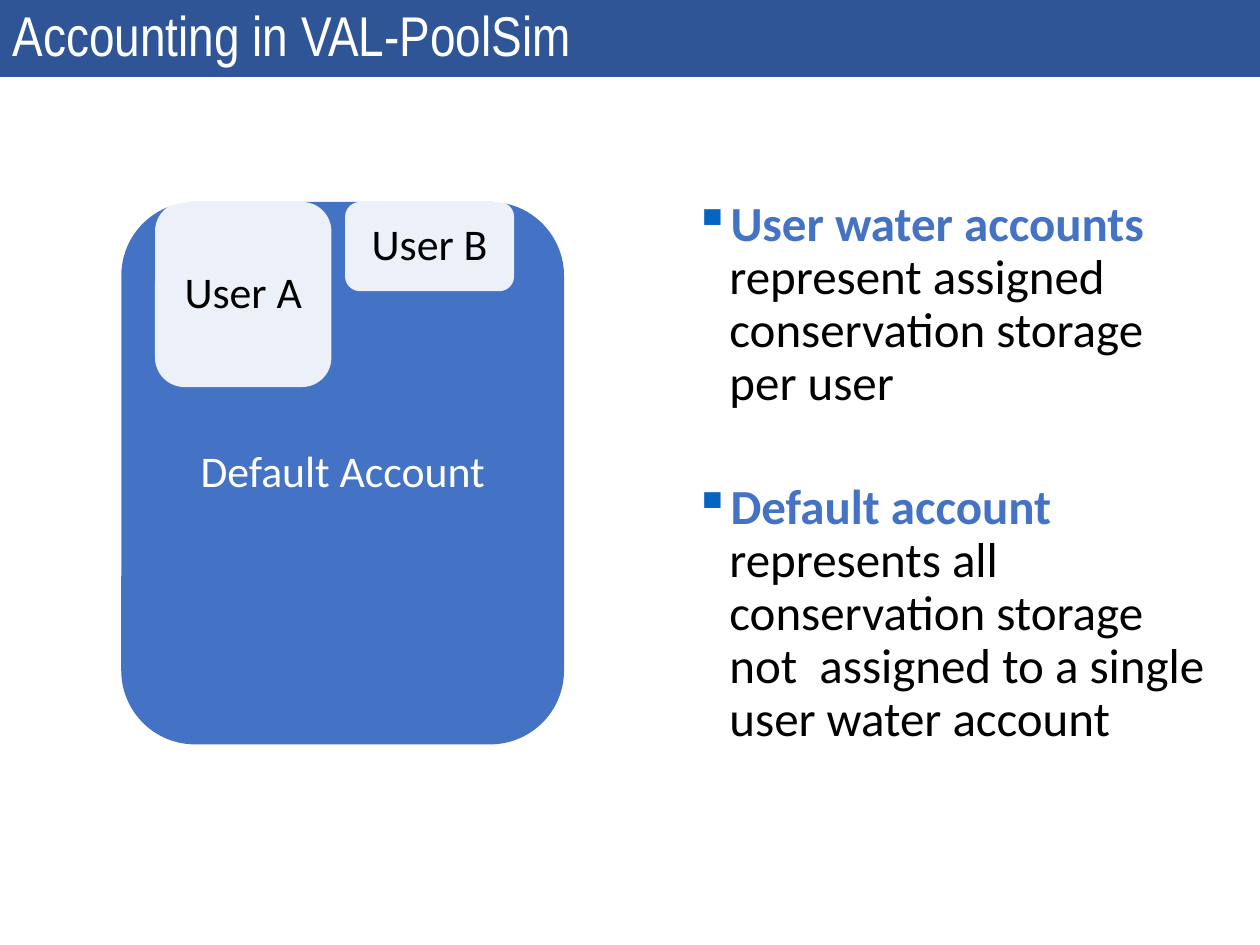
from pptx import Presentation
from pptx.dml.color import RGBColor
from pptx.enum.shapes import MSO_SHAPE
from pptx.enum.text import MSO_ANCHOR, MSO_AUTO_SIZE, PP_ALIGN
from pptx.oxml.ns import qn
from pptx.util import Pt
from lxml.etree import SubElement

TITLE_BLUE, BLUE, BULLET_BLUE = "2F5597", "4472C4", "0563C1"
WHITE, BLACK = "FFFFFF", "000000"


def color(hex_string):
    return RGBColor.from_string(hex_string)


class SlideBuilder:
    """Holds the text style and the slide being built."""

    title_font = "Arial Narrow"
    body_font = "Calibri"
    line_spacing = 0.9

    def __init__(self, slide):
        self.slide = slide

    def fill(self, shape, hex_string, opacity=100):
        shape.fill.solid()
        shape.fill.fore_color.rgb = color(hex_string)
        if opacity < 100:
            rgb = shape.fill._xPr.find(qn("a:solidFill"))[0]
            SubElement(rgb, qn("a:alpha"), val=str(opacity * 1000))

    def format_run(self, run, font_name, size, hex_string, bold=False):
        run.font.name = font_name
        run.font.size = Pt(size)
        run.font.bold = bold
        run.font.color.rgb = color(hex_string)

    def title(self, text, left, top, width, height):
        shape = self.slide.shapes.title
        shape.left, shape.top, shape.width, shape.height = map(Pt, (left, top, width, height))
        self.fill(shape, TITLE_BLUE)
        text_frame = shape.text_frame
        text_frame.text = text
        text_frame.auto_size = MSO_AUTO_SIZE.NONE
        text_frame.vertical_anchor = MSO_ANCHOR.MIDDLE
        paragraph = text_frame.paragraphs[0]
        paragraph.alignment = PP_ALIGN.LEFT
        paragraph.line_spacing = self.line_spacing
        self.format_run(paragraph.runs[0], self.title_font, 32, WHITE)

    def account(self, text, left, top, width, height, fill, text_color, inset, opacity=100):
        shape = self.slide.shapes.add_shape(
            MSO_SHAPE.ROUNDED_RECTANGLE, *map(Pt, (left, top, width, height)))
        shape.shadow.inherit = False
        shape.line.fill.background()
        self.fill(shape, fill, opacity)
        text_frame = shape.text_frame
        text_frame.text = text
        text_frame.word_wrap = True
        text_frame.vertical_anchor = MSO_ANCHOR.MIDDLE
        text_frame.margin_left = text_frame.margin_right = Pt(inset)
        text_frame.margin_top = text_frame.margin_bottom = Pt(inset)
        paragraph = text_frame.paragraphs[0]
        paragraph.alignment = PP_ALIGN.CENTER
        paragraph.line_spacing = self.line_spacing
        self.format_run(paragraph.runs[0], self.body_font, 25, text_color)

    def bullet(self, paragraph, indent=20.25):
        properties = paragraph._p.get_or_add_pPr()
        properties.set("marL", str(Pt(indent)))
        properties.set("indent", str(-Pt(indent)))
        bullet_color = SubElement(properties, qn("a:buClr"))
        SubElement(bullet_color, qn("a:srgbClr"), val=BULLET_BLUE)
        SubElement(properties, qn("a:buChar"), char="▪")

    def definitions(self, entries, left, top, width, height, gap):
        """Adds a bulleted list of (term, meaning) pairs."""
        text_box = self.slide.shapes.add_textbox(*map(Pt, (left, top, width, height)))
        text_frame = text_box.text_frame
        text_frame.word_wrap = True
        for index, (term, meaning) in enumerate(entries):
            paragraph = text_frame.add_paragraph() if index else text_frame.paragraphs[0]
            self.bullet(paragraph)
            paragraph.line_spacing = self.line_spacing
            if index:
                paragraph.space_before = Pt(gap)
            for text, hex_string, bold in ((term, BLUE, True), (meaning, BLACK, False)):
                run = paragraph.add_run()
                run.text = text
                self.format_run(run, self.body_font, 28, hex_string, bold)


def main():
    presentation = Presentation()
    presentation.slide_width, presentation.slide_height = Pt(720), Pt(540)
    title_only = presentation.slide_layouts[5]
    builder = SlideBuilder(presentation.slides.add_slide(title_only))

    builder.title("Accounting in VAL-PoolSim", 0, 0, 720, 44)
    builder.definitions(
        [("User water accounts ", "represent assigned conservation storage per user"),
         ("Default account ", "represents all conservation storage not  assigned "
                              "to a single user water account")],
        389.5, 110.2, 315.4, 334, gap=41)

    accounts_top = 115.4
    builder.account("Default Account", 69.3, accounts_top, 253, 310, BLUE, WHITE, 11)
    for name, left, width, height, inset in (("User A", 88.6, 100.8, 105.8, 11.5),
                                             ("User B", 197.2, 96.6, 51, 9.4)):
        builder.account(name, left, accounts_top, width, height, WHITE, BLACK, inset, opacity=90)

    presentation.save("out.pptx")


if __name__ == "__main__":
    main()
